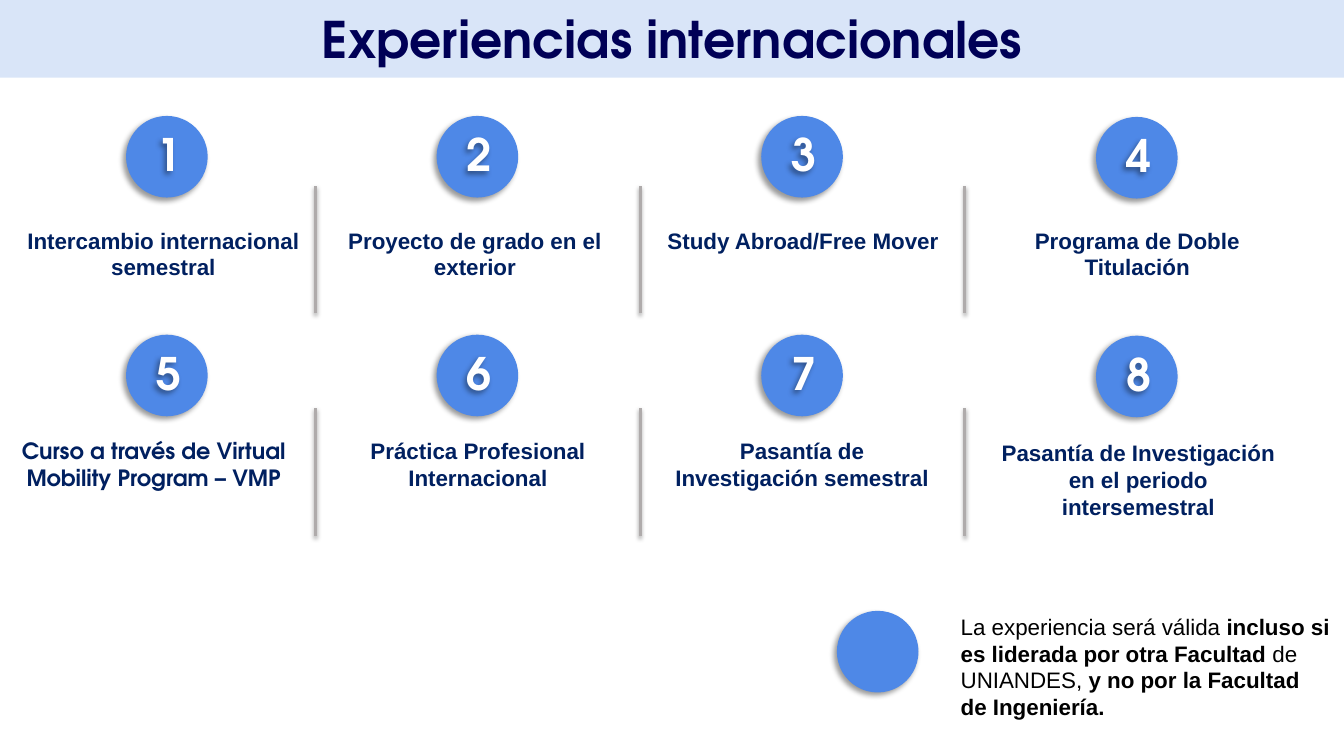
"""Build the slide listing eight kinds of international experience."""
from lxml import etree
from pptx import Presentation
from pptx.dml.color import RGBColor
from pptx.enum.shapes import MSO_CONNECTOR, MSO_SHAPE
from pptx.enum.text import MSO_ANCHOR, MSO_AUTO_SIZE, PP_ALIGN
from pptx.oxml.ns import qn
from pptx.util import Inches, Pt

COLORS = {"band": "D9E5F8", "title": "000056", "label": "002060", "circle": "4E88E7",
          "divider": "AFABAB", "white": "FFFFFF", "black": "000000"}
HEADING, BODY = "TeX Gyre Adventor", "Arial"
DIAMETER = 0.81


def cast_shadow(shape, opacity, blur, distance, angle):
    """Give a shape a soft outer shadow."""
    properties = shape._element.spPr
    for old in properties.findall(qn("a:effectLst")):
        properties.remove(old)
    effects = etree.SubElement(properties, qn("a:effectLst"))
    shadow = etree.SubElement(effects, qn("a:outerShdw"), blurRad=str(Pt(blur)),
                              dist=str(Pt(distance)), dir=str(angle * 60000),
                              algn="ctr", rotWithShape="0")
    color = etree.SubElement(shadow, qn("a:srgbClr"), val=COLORS["black"])
    etree.SubElement(color, qn("a:alpha"), val=str(opacity * 1000))


def style(paragraph, font, size, color, bold, align=PP_ALIGN.CENTER):
    """Set the alignment and font of a paragraph."""
    paragraph.alignment = align
    paragraph.font.name = font
    paragraph.font.size = Pt(size)
    paragraph.font.bold = bold
    paragraph.font.color.rgb = RGBColor.from_string(COLORS[color])


prs = Presentation()
prs.slide_width, prs.slide_height = Inches(13.33), Inches(7.5)
slide = prs.slides.add_slide(prs.slide_layouts[5])
shapes = slide.shapes

title = shapes.title
title.left, title.top, title.width, title.height = 0, 0, Inches(13.33), Inches(0.77)
title.fill.solid()
title.fill.fore_color.rgb = RGBColor.from_string(COLORS["band"])
title.text_frame.text = "Experiencias internacionales"
title.text_frame.vertical_anchor = MSO_ANCHOR.MIDDLE
title.text_frame.auto_size = MSO_AUTO_SIZE.NONE
style(title.text_frame.paragraphs[0], HEADING, 36, "title", True)

for x in (3.13, 6.35, 9.57):
    for top, bottom in ((1.85, 3.11), (4.05, 5.32)):
        divider = shapes.add_connector(MSO_CONNECTOR.STRAIGHT, Inches(x), Inches(bottom),
                                       Inches(x), Inches(top))
        divider.line.color.rgb = RGBColor.from_string(COLORS["divider"])
        divider.line.width = Pt(2)
        cast_shadow(divider, 38, 3.1, 1.6, 90)

experiences = [
    ("Intercambio internacional semestral", 0.05, 2.2, 3.14, 0.64, BODY),
    ("Proyecto de grado en el exterior", 3.34, 2.2, 2.74, 0.64, BODY),
    ("Study Abroad/Free Mover", 6.5, 2.2, 2.93, 0.37, BODY),
    ("Programa de Doble Titulación", 9.91, 2.2, 2.74, 0.64, BODY),
    ("Curso a través de Virtual Mobility Program – VMP", 0.11, 4.29, 2.83, 0.91, HEADING),
    ("Práctica Profesional Internacional", 3.52, 4.29, 2.44, 0.64, BODY),
    ("Pasantía de Investigación semestral", 6.59, 4.29, 2.73, 0.64, BODY),
    ("Pasantía de Investigación en el periodo intersemestral", 9.76, 4.31, 3.06, 0.91, BODY),
]
for text, left, top, width, height, font in experiences:
    label = shapes.add_textbox(Inches(left), Inches(top), Inches(width), Inches(height))
    label.text_frame.word_wrap = True
    label.text_frame.auto_size = MSO_AUTO_SIZE.SHAPE_TO_FIT_TEXT
    label.text_frame.text = text
    style(label.text_frame.paragraphs[0], font, 16, "label", True)

columns = [(1.25, 0), (4.33, 0), (7.55, 0), (10.87, 0.01)]
circles = [(left, top + drop) for top in (1.15, 3.32) for left, drop in columns]
note_circle = (8.3, 6.06)
for number, (left, top) in enumerate(circles + [note_circle], start=1):
    circle = shapes.add_shape(MSO_SHAPE.OVAL, Inches(left), Inches(top),
                              Inches(DIAMETER), Inches(DIAMETER))
    circle.fill.solid()
    circle.fill.fore_color.rgb = RGBColor.from_string(COLORS["circle"])
    circle.line.fill.background()
    cast_shadow(circle, 40, 4, 3, 135)
    if number <= len(experiences):
        digit = shapes.add_textbox(Inches(left + 0.2), Inches(top + 0.09),
                                   Inches(0.41), Inches(0.57))
        digit.text_frame.word_wrap = True
        digit.text_frame.vertical_anchor = MSO_ANCHOR.MIDDLE
        digit.text_frame.text = str(number)
        style(digit.text_frame.paragraphs[0], HEADING, 32, "white", True)
        cast_shadow(digit, 40, 4, 3, 135)

note = shapes.add_textbox(Inches(9.43), Inches(6.03), Inches(3.86), Inches(1.18))
note.text_frame.word_wrap = True
note.text_frame.auto_size = MSO_AUTO_SIZE.SHAPE_TO_FIT_TEXT
note_paragraph = note.text_frame.paragraphs[0]
style(note_paragraph, BODY, 16, "black", False, PP_ALIGN.LEFT)
for text, bold in [("La experiencia será válida ", False),
                   ("incluso si es liderada por otra Facultad ", True),
                   ("de UNIANDES, ", False),
                   ("y no por la Facultad de Ingeniería.", True)]:
    run = note_paragraph.add_run()
    run.text = text
    run.font.bold = bold

prs.save("out.pptx")
